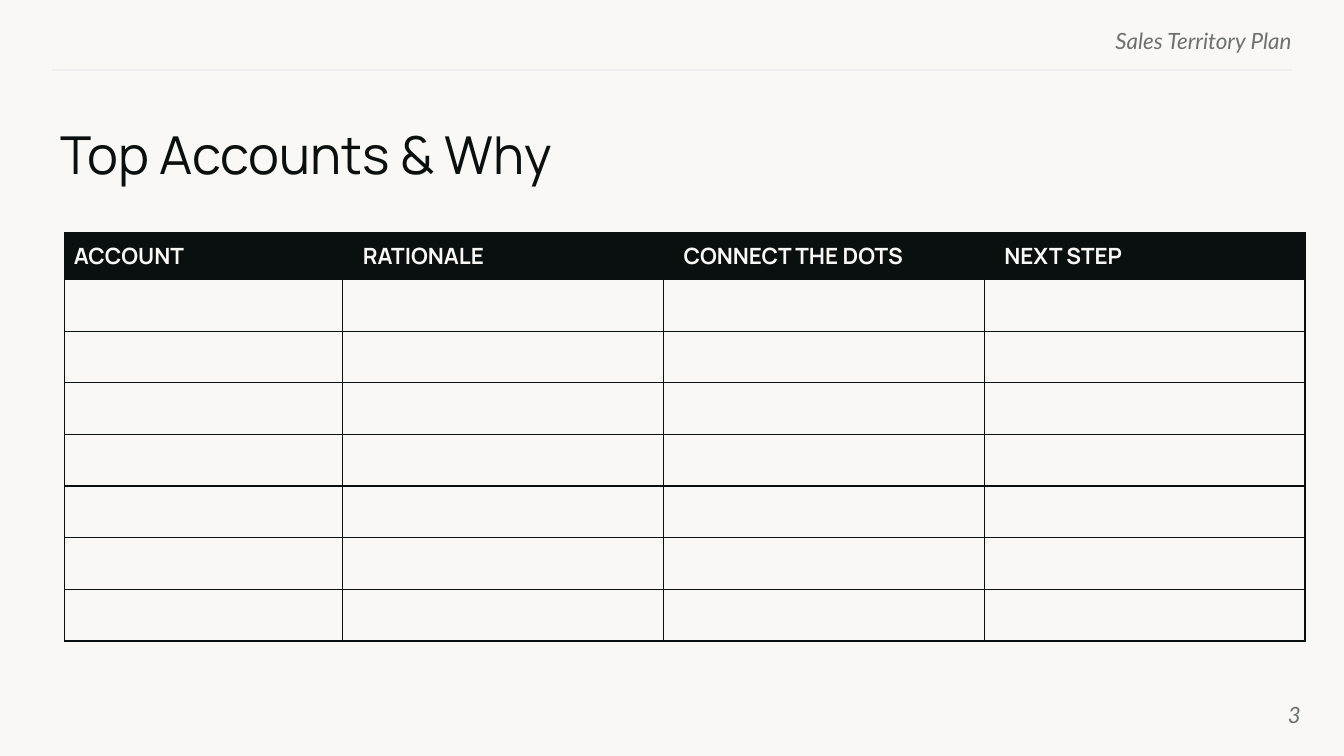
"""Build the top accounts slide of a sales territory plan."""
import pptx
import pptx.dml.color
import pptx.enum.shapes
import pptx.enum.text
import pptx.oxml
import pptx.oxml.ns
import pptx.util
from pptx.util import Inches

INK, PAPER, MUTED, RULE = "09100F", "F9F8F5", "6C706F", "EFEFEF"
ALIGN = pptx.enum.text.PP_ALIGN
ANCHOR = pptx.enum.text.MSO_ANCHOR

TITLE_FONT = {"name": "Manrope", "size": pptx.util.Pt(28)}
HEADING_FONT = {"name": "Manrope", "size": pptx.util.Pt(12), "bold": True}
MARGINAL_FONT = {"name": "Lato", "size": pptx.util.Pt(12), "italic": True}

TEXTS = [
    ("Top Accounts & Why", (0.45, 0.91, 9.23, 0.51), TITLE_FONT, INK, ALIGN.LEFT, ANCHOR.TOP),
    ("Sales Territory Plan", (4.92, 0.2, 4.69, 0.18), MARGINAL_FONT, MUTED, ALIGN.RIGHT, ANCHOR.TOP),
    ("3", (9.08, 5.1, 0.6, 0.43), MARGINAL_FONT, MUTED, ALIGN.RIGHT, ANCHOR.MIDDLE),
]
HEADINGS = [
    ("ACCOUNT", 0.07, 0.05, 0),
    ("RATIONALE", 0.15, 0.15, 0),
    ("CONNECT THE DOTS", 0.15, 0.15, 10),
    ("NEXT STEP", 0.15, 0.15, 10),
]
BLANK_ROWS = 7
SLIDE_WIDTH = 10
TABLE_LEFT, TABLE_TOP, TABLE_WIDTH, TABLE_HEIGHT = 0.48, 1.73, 9.23, 3.04
ACCOUNT_WIDTH, HEADING_HEIGHT = 2.07, 0.35


def rgb(value):
    return pptx.dml.color.RGBColor.from_string(value)


def assign(target, values):
    for key, value in values.items():
        setattr(target, key, value)


def split(total, first, others):
    return [first] + [(total - first) / others] * others


def write(paragraph, words, font, color):
    run = paragraph.add_run()
    run.text = words
    assign(run.font, font)
    run.font.color.rgb = rgb(color)


def add_text(slide, words, box, font, color, align, anchor):
    frame = slide.shapes.add_textbox(*map(Inches, box)).text_frame
    assign(frame, {"word_wrap": True, "vertical_anchor": anchor, "margin_left": 0,
                   "margin_right": 0, "margin_top": 0, "margin_bottom": 0})
    frame.paragraphs[0].alignment = align
    write(frame.paragraphs[0], words, font, color)


def add_header_rule(slide):
    rule = slide.shapes.add_connector(
        pptx.enum.shapes.MSO_CONNECTOR.STRAIGHT, *map(Inches, (9.61, 0.52, 0.39, 0.52)))
    rule.line.color.rgb = rgb(RULE)
    rule.line.width = pptx.util.Pt(0.75)
    rule._element.spPr.append(pptx.oxml.parse_xml(
        f"<a:effectLst {pptx.oxml.ns.nsdecls('a')}/>"))


def style_cell(cell, fill, left, right):
    for side in "LRTB":
        cell._tc.get_or_add_tcPr().append(pptx.oxml.parse_xml(
            f'<a:ln{side} {pptx.oxml.ns.nsdecls("a")} w="{pptx.util.Pt(0.75)}">'
            f'<a:solidFill><a:srgbClr val="{INK}"/></a:solidFill></a:ln{side}>'))
    cell.fill.solid()
    cell.fill.fore_color.rgb = rgb(fill)
    assign(cell, {"vertical_anchor": ANCHOR.MIDDLE, "margin_left": Inches(left),
                  "margin_right": Inches(right), "margin_top": 0, "margin_bottom": 0})


def add_accounts(slide):
    widths = split(TABLE_WIDTH, ACCOUNT_WIDTH, len(HEADINGS) - 1)
    heights = split(TABLE_HEIGHT, HEADING_HEIGHT, BLANK_ROWS)
    accounts = slide.shapes.add_table(
        len(heights), len(widths),
        *map(Inches, (TABLE_LEFT, TABLE_TOP, TABLE_WIDTH, TABLE_HEIGHT))).table
    assign(accounts, {"first_row": False, "horz_banding": False})
    for row, height in zip(accounts.rows, heights):
        row.height = Inches(height)
    for column, (words, left, right, space_after) in enumerate(HEADINGS):
        accounts.columns[column].width = Inches(widths[column])
        for row in range(len(heights)):
            style_cell(accounts.cell(row, column), PAPER if row else INK, left, right)
        paragraph = accounts.cell(0, column).text_frame.paragraphs[0]
        paragraph.space_after = pptx.util.Pt(space_after)
        write(paragraph, words, HEADING_FONT, PAPER)


def main():
    deck = pptx.Presentation()
    assign(deck, {"slide_width": Inches(SLIDE_WIDTH),
                  "slide_height": Inches(SLIDE_WIDTH * 9 / 16)})
    slide = deck.slides.add_slide(deck.slide_layouts[6])
    slide.background.fill.solid()
    slide.background.fill.fore_color.rgb = rgb(PAPER)
    add_header_rule(slide)
    for text in TEXTS:
        add_text(slide, *text)
    add_accounts(slide)
    deck.save("out.pptx")


if __name__ == "__main__":
    main()
